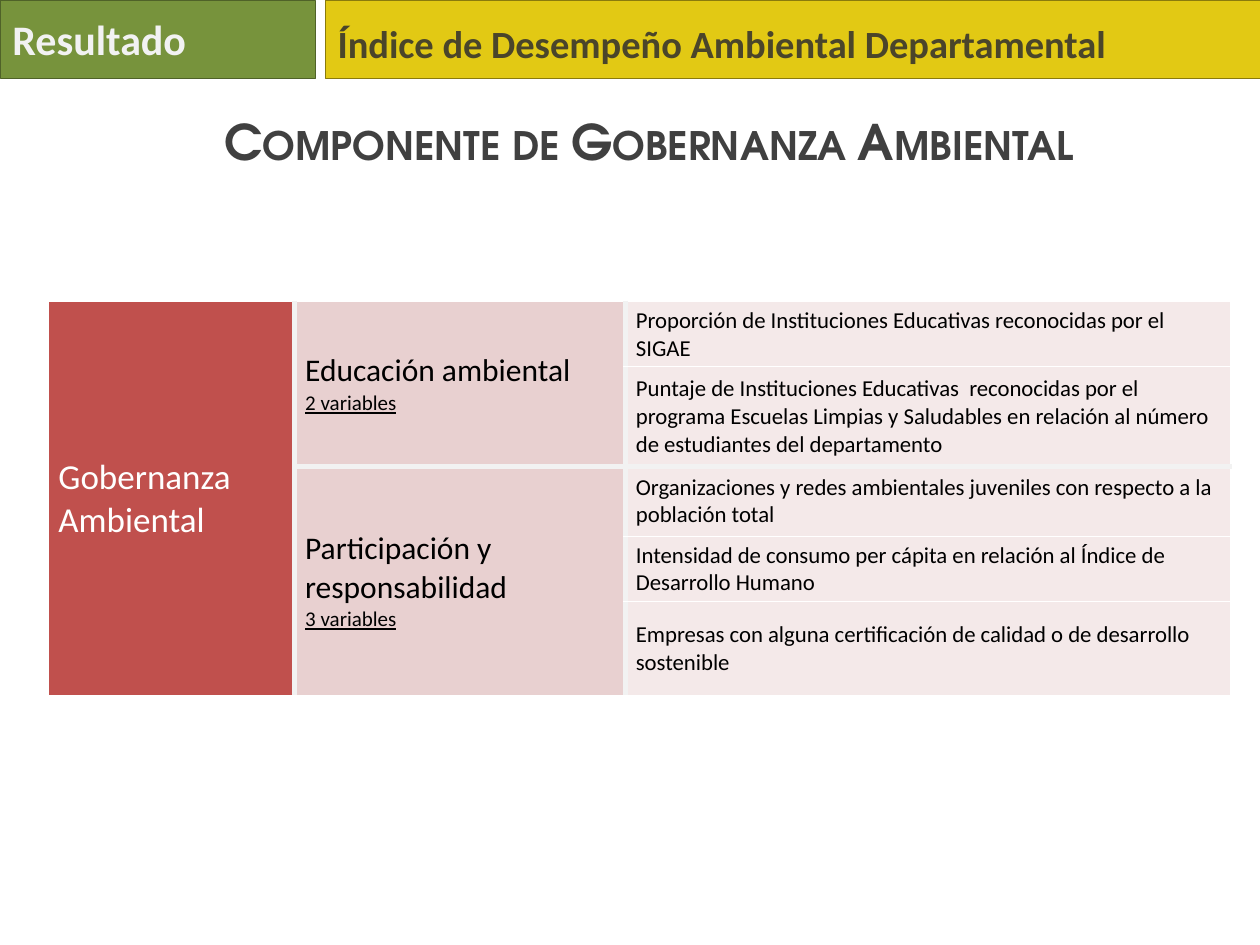
from pptx import Presentation
from pptx import util as u
from pptx.dml import color
from pptx.enum import shapes, text
from pptx.oxml import ns, xmlchemy

GROUPS = [
    ("Educación ambiental", "2 variables", [
        "Proporción de Instituciones Educativas reconocidas por el SIGAE",
        "Puntaje de Instituciones Educativas  reconocidas por el programa Escuelas "
        "Limpias y Saludables en relación al número de estudiantes del departamento"]),
    ("Participación y responsabilidad", "3 variables", [
        "Organizaciones y redes ambientales juveniles con respecto a la población total",
        "Intensidad de consumo per cápita en relación al Índice de Desarrollo Humano",
        "Empresas con alguna certificación de calidad o de desarrollo sostenible"]),
]
COLUMNS = [141, 189, 346]
ROWS = [37, 57, 40, 37, 54]
FILLS = ["C0504D", "E8D0D0", "F4E9E9"]
THIN, FINE, THICK = ("FFFFFF", 1), ("FFFFFF", 0.25), ("F2F2F2", 3)
ROW_EDGES = [THIN, THIN, THICK, FINE, THIN, THIN]
COLUMN_EDGES = [THIN, THICK, THICK, THIN]


def rgb(value):
    """Turn a hex string into a colour."""
    return color.RGBColor.from_string(value)


def paint(target, value):
    """Give a shape or cell a solid fill."""
    target.fill.solid()
    target.fill.fore_color.rgb = rgb(value)


def write(para, words, hue, **formats):
    """Write one paragraph and format its runs."""
    para.text = words
    for span in para.runs:
        span.font.color.rgb = rgb(hue)
        for name, value in formats.items():
            setattr(span.font, name, value)


def place(item, box):
    """Move an object to a box given in points."""
    for name, value in zip(("left", "top", "width", "height"), box):
        setattr(item, name, u.Pt(value))


def fit_label(label):
    """Keep a label on one line, starting at the top of its box."""
    frame = label.text_frame
    settings = {"word_wrap": False, "vertical_anchor": text.MSO_ANCHOR.TOP,
                "auto_size": text.MSO_AUTO_SIZE.SHAPE_TO_FIT_TEXT}
    for name, value in settings.items():
        setattr(frame, name, value)
    return frame.paragraphs[0]


def add_banner(page, box, fill, edge, words, label, hue, size):
    """Add a header bar with its label, given as top, width and height."""
    left, top, width, height = map(u.Pt, box)
    bar = page.shapes.add_shape(shapes.MSO_SHAPE.RECTANGLE, left, top, width, height)
    bar.shadow.inherit = False
    paint(bar, fill)
    bar.line.color.rgb = rgb(edge)
    bar.line.width = u.Pt(0.25)
    caption = page.shapes.add_textbox(left, *map(u.Pt, label))
    write(fit_label(caption), words, hue, name="Calibri", size=u.Pt(size), bold=True)


def set_title(page, box):
    """Format the title placeholder in small capitals."""
    title = page.shapes.title
    place(title, box)
    para = fit_label(title)
    para.alignment = text.PP_ALIGN.CENTER
    write(para, "Componente de Gobernanza Ambiental", "404040",
          name="TeX Gyre Adventor", size=u.Pt(28), bold=True)
    para.runs[0].font._element.set("cap", "small")


def set_borders(cell, row, column):
    """Draw the four edges of a cell or merged block."""
    last = row + (cell.span_height if cell.is_merge_origin else 1)
    edges = {"lnL": COLUMN_EDGES[column], "lnR": COLUMN_EDGES[column + 1],
             "lnT": ROW_EDGES[row], "lnB": ROW_EDGES[last]}
    properties = cell._tc.get_or_add_tcPr()
    for tag, (hue, width) in edges.items():
        line = xmlchemy.OxmlElement(f"a:{tag}")
        line.set("w", str(u.Pt(width)))
        solid = xmlchemy.OxmlElement("a:solidFill")
        shade = xmlchemy.OxmlElement("a:srgbClr")
        shade.set("val", hue)
        solid.append(shade)
        line.append(solid)
        properties.append(line)


def fill_cell(table, row, column, lines):
    """Fill a cell with paragraphs of words, size and underline."""
    cell = table.cell(row, column)
    set_borders(cell, row, column)
    paint(cell, FILLS[column])
    margins = {"margin_left": 6, "margin_right": 6, "margin_top": 3, "margin_bottom": 3}
    for name, value in margins.items():
        setattr(cell, name, u.Pt(value))
    cell.vertical_anchor = text.MSO_ANCHOR.MIDDLE
    for index, (words, size, underline) in enumerate(lines):
        frame = cell.text_frame
        para = frame.add_paragraph() if index else frame.paragraphs[0]
        write(para, words, "000000" if column else "FFFFFF",
              name="Calibri", size=u.Pt(size), underline=underline)


def add_components(page, left, top):
    """Add the table of components, topics and variables."""
    table = page.shapes.add_table(
        len(ROWS), len(COLUMNS), u.Pt(left), u.Pt(top),
        u.Pt(sum(COLUMNS)), u.Pt(sum(ROWS))).table
    table.first_row = table.horz_banding = False
    for column, width in zip(table.columns, COLUMNS):
        column.width = u.Pt(width)
    for row, height in zip(table.rows, ROWS):
        row.height = u.Pt(height)
    table.cell(0, 0).merge(table.cell(len(ROWS) - 1, 0))
    fill_cell(table, 0, 0, [("Gobernanza\vAmbiental", 20, False)])
    start = 0
    for topic, count, variables in GROUPS:
        end = start + len(variables)
        table.cell(start, 1).merge(table.cell(end - 1, 1))
        fill_cell(table, start, 1, [(topic, 18, False), (count, 12, True)])
        for row, words in enumerate(variables, start):
            fill_cell(table, row, 2, [(words, 13, False)])
        start = end


def main():
    """Build and save the deck."""
    deck = Presentation()
    deck.slide_width, deck.slide_height = u.Pt(720), u.Pt(540)
    page = deck.slides.add_slide(deck.slide_layouts[5])
    add_components(page, 27.4, 172.3)
    add_banner(page, (0, 0, 180, 44.6), "77933C", "4F6228",
               "Resultado", (4.3, 115, 36), "F2F2F2", 24)
    set_title(page, (116, 60, 510, 41))
    add_banner(page, (185.8, 0, 534.2, 44.6), "E2C914", "8A7B0C",
               "Índice de Desempeño Ambiental Departamental", (8, 459, 34), "4A452A", 22)
    deck.save("out.pptx")


if __name__ == "__main__":
    main()
